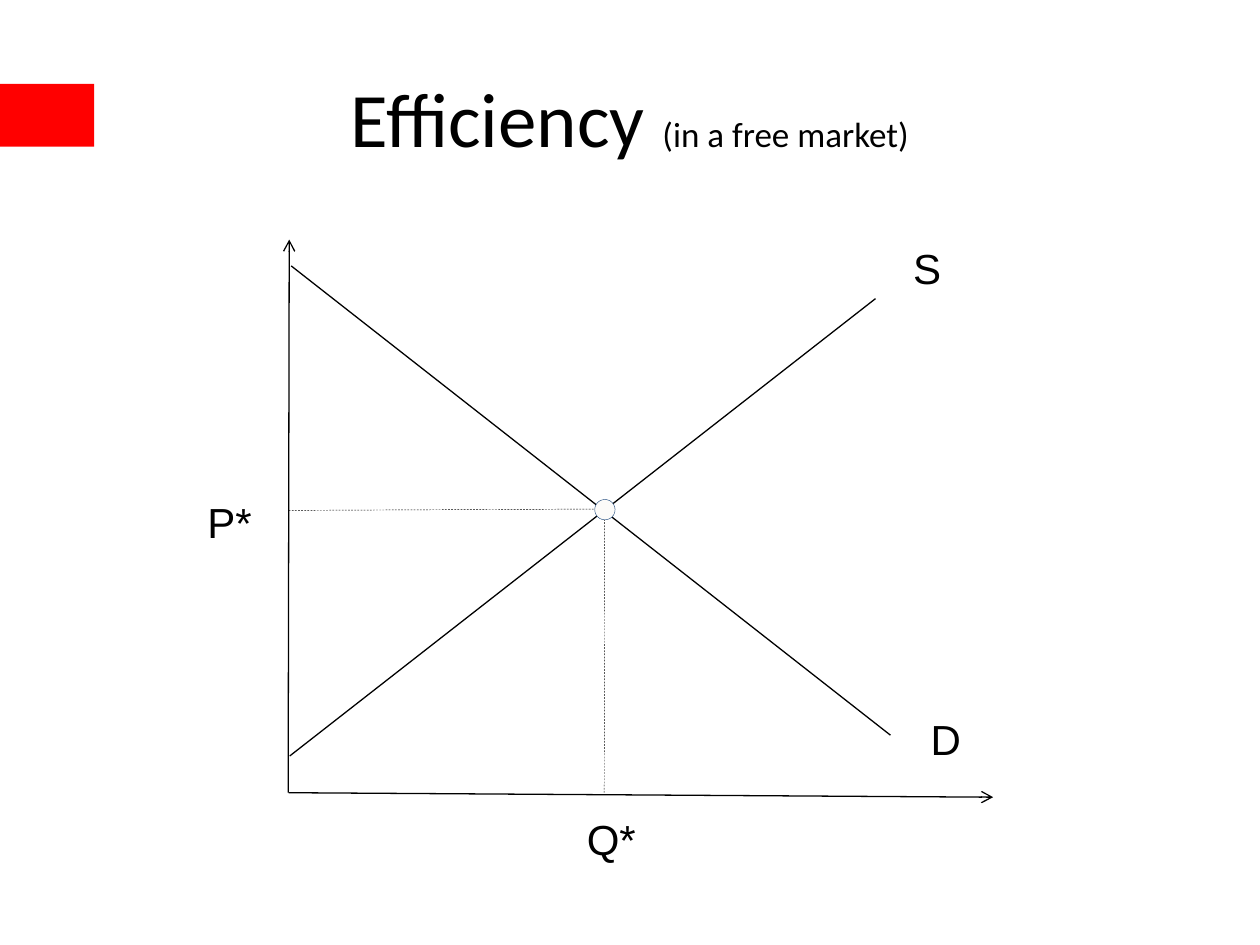
from pptx import Presentation
from pptx.dml.color import RGBColor
from pptx.enum.dml import MSO_LINE
from pptx.enum.shapes import MSO_CONNECTOR, MSO_SHAPE
from pptx.enum.text import MSO_ANCHOR, MSO_AUTO_SIZE, PP_ALIGN
from pptx.oxml.ns import qn
from pptx.util import Cm, Pt
from lxml.etree import SubElement


def rgb(value):
    return RGBColor.from_string(value)


def style_run(r, name, size):
    r.font.name = name
    r.font.size = Pt(size)
    r.font.color.rgb = rgb("000000")


prs = Presentation()
prs.slide_width, prs.slide_height = Cm(25.4), Cm(19.05)
s = prs.slides.add_slide(prs.slide_layouts[5])

title = s.shapes.title
title.left, title.top, title.width, title.height = Cm(1.27), Cm(0.76), Cm(22.86), Cm(3.18)
title.text_frame.vertical_anchor = MSO_ANCHOR.MIDDLE
p = title.text_frame.paragraphs[0]
p.alignment = PP_ALIGN.CENTER
for text, size in [("Efficiency ", 44), ("(in a free market)", 20)]:
    r = p.add_run()
    r.text = text
    style_run(r, "Calibri", size)

accent = s.shapes.add_shape(MSO_SHAPE.RECTANGLE, Cm(0), Cm(1.69), Cm(1.9), Cm(1.27))
accent.shadow.inherit = False
accent.fill.solid()
accent.fill.fore_color.rgb = rgb("FF0000")
accent.line.fill.background()

lines = [
    (12.19, 10.4, 12.18, 16, "dash"),
    (17.95, 14.82, 5.87, 5.36, "solid"),
    (5.82, 15.98, 20.02, 16.07, "arrow"),
    (5.81, 15.98, 5.83, 4.83, "arrow"),
    (5.84, 15.24, 17.65, 6.02, "solid"),
    (5.82, 10.29, 12.4, 10.26, "dash"),
]
for x1, y1, x2, y2, kind in lines:
    line = s.shapes.add_connector(MSO_CONNECTOR.STRAIGHT, Cm(x1), Cm(y1), Cm(x2), Cm(y2))
    line.line.color.rgb = rgb("000000")
    line.line.width = Pt(0.25 if kind == "dash" else 0.75)
    if kind == "dash":
        line.line.dash_style = MSO_LINE.DASH
    if kind == "arrow":
        SubElement(line.line._get_or_add_ln(), qn("a:tailEnd"), type="arrow")
    SubElement(line._element.spPr, qn("a:effectLst"))

point = s.shapes.add_shape(MSO_SHAPE.OVAL, Cm(11.99), Cm(10.07), Cm(0.41), Cm(0.41))
point.shadow.inherit = False
point.fill.solid()
point.fill.fore_color.rgb = rgb("FCFBF9")
point.line.color.rgb = rgb("1F497D")
point.line.width = Pt(0.25)

labels = [
    ("P*", 3.93, 10.08, 1.42),
    ("Q*", 11.58, 16.47, 1.5),
    ("S", 18.16, 4.97, 1.09),
    ("D", 18.51, 14.45, 1.14),
]
for text, x, y, width in labels:
    sp = s.shapes.add_textbox(Cm(x), Cm(y), Cm(width), Cm(1.07))
    tf = sp.text_frame
    tf.word_wrap = False
    tf.auto_size = MSO_AUTO_SIZE.SHAPE_TO_FIT_TEXT
    tf.text = text
    p = tf.paragraphs[0]
    p.line_spacing = 0.8
    style_run(p.runs[0], "Arial", 24)

prs.save("out.pptx")
